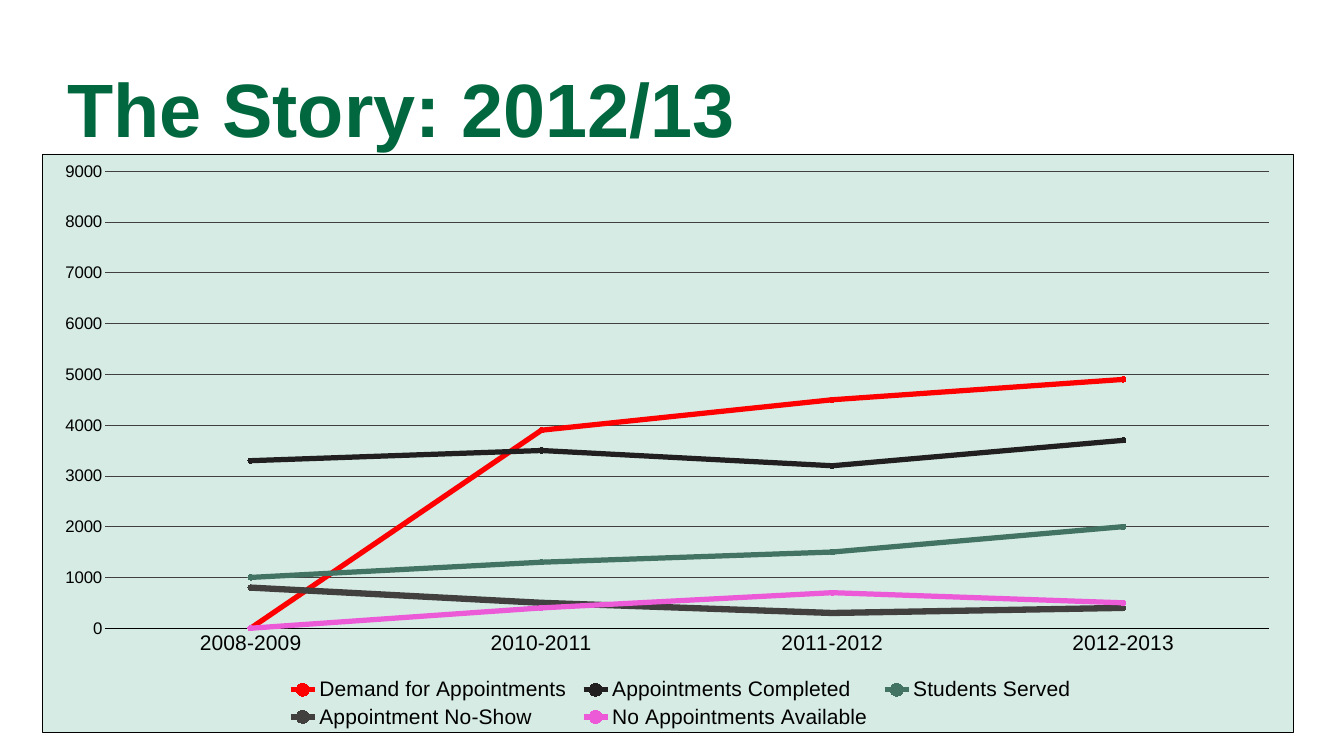
"""Build a slide with a line chart of appointment figures by school year."""
import pptx
import pptx.chart.data
import pptx.dml.color
import pptx.enum.chart
import pptx.enum.text
import pptx.oxml
import pptx.oxml.ns
import pptx.util

Cm, Pt = pptx.util.Cm, pptx.util.Pt
enum = pptx.enum.chart
qn = pptx.oxml.ns.qn
SPACE = pptx.oxml.ns.nsdecls("a", "c")


def color(code):
    """Turn a hex string into a colour."""
    return pptx.dml.color.RGBColor.from_string(code)


def place(node, index, x, y, w, h):
    """Give a chart part a manual layout in fractions of the chart."""
    for old in node.findall(qn("c:layout")):
        node.remove(old)
    inner = '<c:layoutTarget val="inner"/>' if index == 0 else ""
    node.insert(index, pptx.oxml.parse_xml(
        f'<c:layout {SPACE}><c:manualLayout>{inner}'
        '<c:xMode val="edge"/><c:yMode val="edge"/>'
        f'<c:x val="{x}"/><c:y val="{y}"/><c:w val="{w}"/><c:h val="{h}"/>'
        '</c:manualLayout></c:layout>'))


deck = pptx.Presentation()
deck.slide_width, deck.slide_height = Cm(45.16), Cm(25.4)
slide = deck.slides.add_slide(deck.slide_layouts[5])

years = ["2008-2009", "2010-2011", "2011-2012", "2012-2013"]
lines = [
    ("Demand for Appointments", [None, 3900, 4500, 4900], "FF0000", 5),
    ("Appointments Completed", [3300, 3500, 3200, 3700], "211F1F", 5),
    ("Students Served", [1000, 1300, 1500, 2000], "437362", 5),
    ("Appointment No-Show", [800, 500, 300, 400], "423F3F", 6),
    ("No Appointments Available", [None, 400, 700, 500], "EC5AD7", 5),
]
data = pptx.chart.data.CategoryChartData()
data.categories = years
for name, vals, tint, width in lines:
    data.add_series(name, vals)
chart = slide.shapes.add_chart(
    enum.XL_CHART_TYPE.LINE_MARKERS,
    Cm(1.42), Cm(5.16), Cm(42.06), Cm(19.46), data).chart
chart.has_title = False
chart.font.name = "Arial"
chart.font.size = Pt(10)
chart.font.color.rgb = color("423F3F")

plot = chart.plots[0]
plot.vary_by_categories = False
for line, (name, vals, tint, width) in zip(plot.series, lines):
    line.smooth = False
    line.format.line.color.rgb = color(tint)
    line.format.line.width = Pt(width)
    mark = line.marker
    mark.style = enum.XL_MARKER_STYLE.CIRCLE
    mark.size = 5
    mark.format.fill.solid()
    mark.format.fill.fore_color.rgb = color(tint)
    mark.format.line.color.rgb = color(tint)

chart.has_legend = True
legend = chart.legend
legend.position = enum.XL_LEGEND_POSITION.BOTTOM
legend.include_in_layout = False
base, side = chart.category_axis, chart.value_axis
for axis in (base, side):
    axis.major_tick_mark = axis.minor_tick_mark = enum.XL_TICK_MARK.NONE
for font, size in ((base.tick_labels.font, 20),
                   (side.tick_labels.font, 16), (legend.font, 20)):
    font.name = "Arial"
    font.size = Pt(size)
    font.color.rgb = color("000000")

base.format.line.color.rgb = color("000000")
base.format.line.width = Pt(0.75)
side.format.line.fill.background()
side.minimum_scale, side.maximum_scale, side.major_unit = 0, 9000, 1000
side.has_major_gridlines = True
grid = side.major_gridlines.format.line
grid.color.rgb = color("423F3F")
grid.width = Pt(0.75)

root = chart.element
body = root.find(qn("c:chart"))
body.find(qn("c:dispBlanksAs")).set("val", "zero")
place(body.find(qn("c:plotArea")), 0, 0.05, 0.03, 0.93, 0.79)
place(body.find(qn("c:legend")), 1, 0.19, 0.9, 0.64, 0.1)
body.addnext(pptx.oxml.parse_xml(
    f'<c:spPr {SPACE}><a:solidFill><a:srgbClr val="D5EBE4"/></a:solidFill>'
    f'<a:ln w="{int(Pt(0.75))}"><a:solidFill><a:srgbClr val="000000"/>'
    '</a:solidFill></a:ln></c:spPr>'))

title = slide.shapes.title
title.left, title.top = Cm(2.26), Cm(1.85)
title.width, title.height = Cm(40.64), Cm(4.06)
slide.shapes.element.append(title.element)
frame = title.text_frame
frame.text = "The Story: 2012/13"
frame.word_wrap = True
frame.auto_size = pptx.enum.text.MSO_AUTO_SIZE.NONE
frame.vertical_anchor = pptx.enum.text.MSO_ANCHOR.MIDDLE
frame.margin_left = frame.margin_right = Cm(0)
frame.margin_top = frame.margin_bottom = Cm(0)
para = frame.paragraphs[0]
para.alignment = pptx.enum.text.PP_ALIGN.LEFT
para.line_spacing = 0.8
font = para.runs[0].font
font.name, font.size, font.bold = "Arial", Pt(72), True
font.color.rgb = color("00673E")

deck.save("out.pptx")
